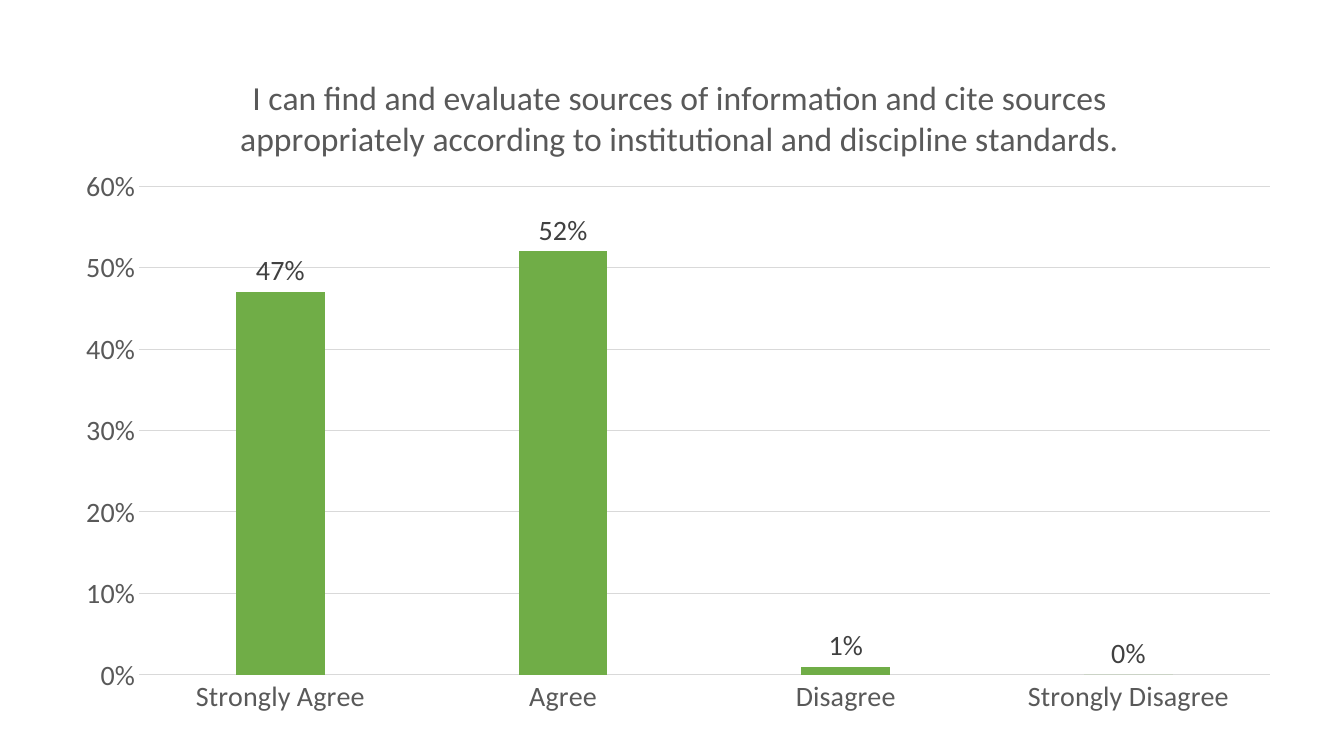
from lxml.etree import SubElement, QName
from pptx import Presentation
from pptx.chart.data import CategoryChartData
from pptx.dml.color import RGBColor
from pptx.enum.chart import XL_CHART_TYPE, XL_LABEL_POSITION, XL_TICK_MARK
from pptx.util import Inches, Pt

TITLE = ("I can find and evaluate sources of information and cite sources "
         "appropriately according to institutional and discipline standards.")
ANSWERS = {"Strongly Agree": 0.47, "Agree": 0.52,
           "Disagree": 0.01, "Strongly Disagree": 0}
GREEN, GREY, DARK, RULE = "70AD47", "595959", "404040", "D9D9D9"

# Shares of the chart's size
TITLE_POS = {"x": 0.14, "y": 0.05}
PLOT_POS = {"x": 0.063, "y": 0.219, "w": 0.917, "h": 0.705}


def rgb(color):
    return RGBColor.from_string(color)


def style_font(font, size, color):
    font.name, font.size, font.bold = "Calibri", Pt(size), False
    font.color.rgb = rgb(color)


def style_line(line):
    line.color.rgb, line.width = rgb(RULE), Pt(0.75)


def set_layout(parent, index, shares, inner=False):
    """Place a chart part by shares of the chart's width and height."""
    ns = QName(parent).namespace
    for old in parent.findall(f"{{{ns}}}layout"):
        parent.remove(old)
    layout = SubElement(parent, f"{{{ns}}}layout")
    parent.insert(index, layout)
    manual = SubElement(layout, f"{{{ns}}}manualLayout")
    settings = [("layoutTarget", "inner")] if inner else []
    settings += [("xMode", "edge"), ("yMode", "edge"), *shares.items()]
    for tag, value in settings:
        SubElement(manual, f"{{{ns}}}{tag}").set("val", str(value))


prs = Presentation()
prs.slide_width, prs.slide_height = Inches(13.33), Inches(7.5)
s = prs.slides.add_slide(prs.slide_layouts[6])

data = CategoryChartData(number_format="0%")
data.categories = list(ANSWERS)
data.add_series("Series 1", list(ANSWERS.values()))
chart = s.shapes.add_chart(XL_CHART_TYPE.COLUMN_CLUSTERED, Inches(0.61), Inches(0.34),
                           Inches(12.23), Inches(6.88), data).chart
chart.has_legend = False
style_font(chart.font, 20, "000000")

title = chart.chart_title
r = title.text_frame.paragraphs[0].add_run()
r.text = TITLE
style_font(r.font, 24, GREY)
title.include_in_layout = False
set_layout(title.element, 1, TITLE_POS)
set_layout(chart.element.xpath("c:chart/c:plotArea")[0], 0, PLOT_POS, inner=True)

for axis in (chart.category_axis, chart.value_axis):
    axis.major_tick_mark = axis.minor_tick_mark = XL_TICK_MARK.NONE
    style_font(axis.tick_labels.font, 20, GREY)
style_line(chart.category_axis.format.line)

values = chart.value_axis
values.format.line.fill.background()
values.minimum_scale, values.maximum_scale, values.major_unit = 0, 0.6, 0.1
values.tick_labels.number_format = "0%"
values.tick_labels.number_format_is_linked = False
style_line(values.major_gridlines.format.line)

plot = chart.plots[0]
plot.gap_width, plot.overlap, plot.vary_by_categories = 219, -27, False
bars = plot.series[0]
bars.format.fill.solid()
bars.format.fill.fore_color.rgb = rgb(GREEN)
labels = bars.data_labels
labels.show_value = True
labels.position = XL_LABEL_POSITION.OUTSIDE_END
labels.number_format, labels.number_format_is_linked = "0%", False
style_font(labels.font, 20, DARK)

prs.save("out.pptx")
